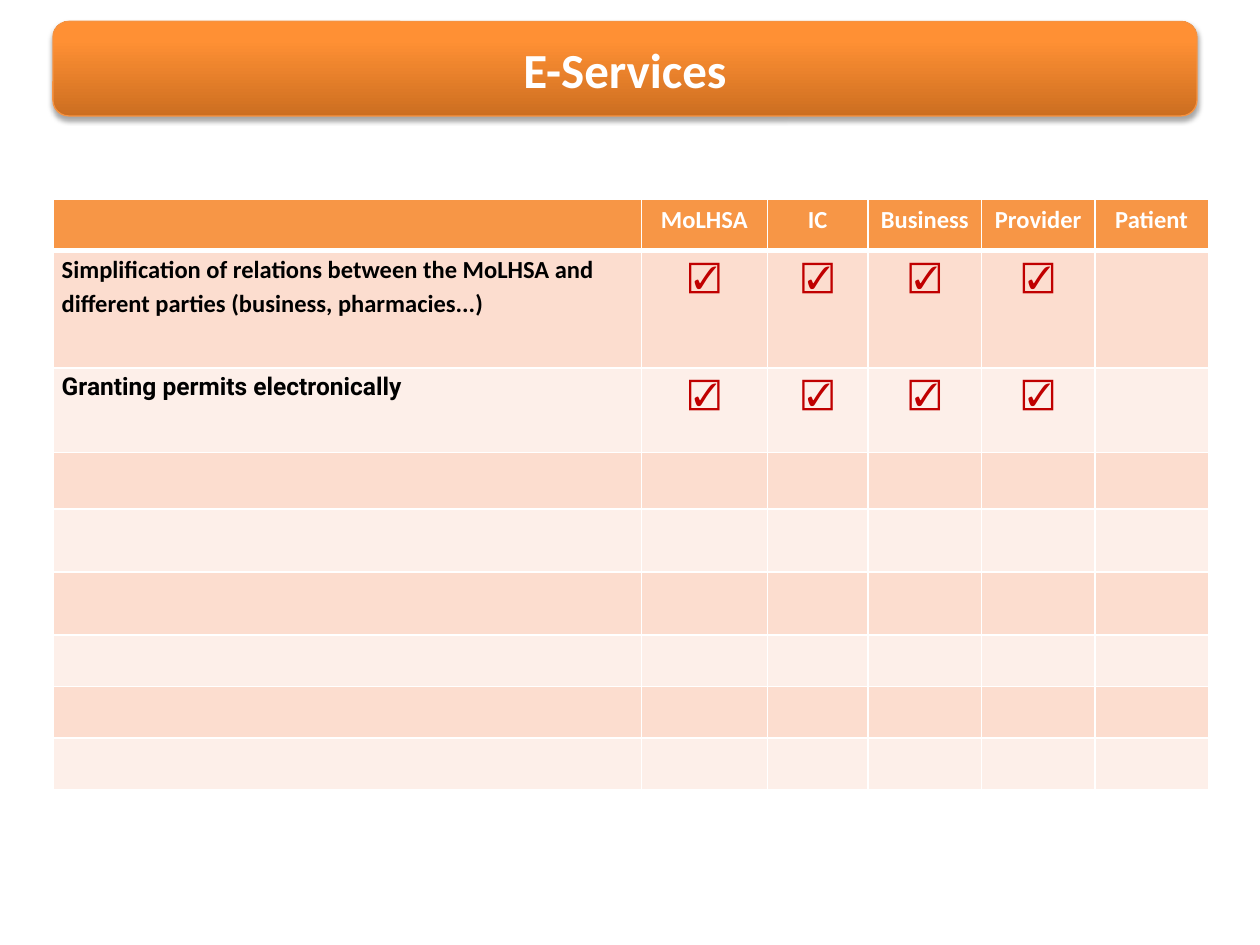
from dataclasses import dataclass

from lxml.etree import SubElement
from pptx import Presentation
from pptx.dml.color import RGBColor
from pptx.enum.shapes import MSO_SHAPE
from pptx.enum.text import MSO_ANCHOR, PP_ALIGN
from pptx.oxml import parse_xml
from pptx.oxml.ns import nsdecls, qn
from pptx.slide import Slide
from pptx.table import _Cell
from pptx.text.text import TextFrame
from pptx.util import Inches, Pt


@dataclass(frozen=True)
class Theme:
    """Colours, fonts and type sizes of the slide."""

    white: str = "FFFFFF"
    black: str = "000000"
    tick: str = "C00000"
    header: str = "F79646"
    bands: tuple[str, str] = ("FCDDCF", "FDEFE9")
    banner_line: str = "F69240"
    banner_stops: tuple[tuple[int, str], ...] = ((0, "CC6E20"), (80, "FF9034"), (100, "FF9136"))
    font: str = "Calibri"
    title_size: int = 28
    label_size: int = 14
    tick_size: int = 18


@dataclass(frozen=True)
class Service:
    """A service and the parties that it reaches."""

    name: str
    font: str
    parties: tuple[str, ...]


THEME = Theme()
PARTIES = ("MoLHSA", "IC", "Business", "Provider", "Patient")
SERVICES = (
    Service(
        "Simplification of relations between the MoLHSA and different parties (business, pharmacies...)",
        "Calibri",
        PARTIES[:4],
    ),
    Service("Granting permits electronically", "Roboto", PARTIES[:4]),
)
COLUMN_WIDTHS = (4.67, 1, 0.8, 0.9, 0.9, 0.9)
ROW_HEIGHTS = (0.41, 0.93, 0.67, 0.45, 0.5, 0.5, 0.41, 0.41, 0.41)
BANNER = tuple(Inches(length) for length in (0.42, 0.17, 9.08, 0.75))


def write(
    frame: TextFrame,
    text: str,
    *,
    size: int,
    color: str,
    font: str = THEME.font,
    bold: bool = True,
    align: PP_ALIGN = PP_ALIGN.CENTER,
    line_spacing: float | None = None,
    space_before: int | None = None,
) -> None:
    """Write one formatted paragraph into a text frame."""
    para = frame.paragraphs[0]
    para.alignment = align
    if line_spacing is not None:
        para.line_spacing = line_spacing
    if space_before is not None:
        para.space_before = Pt(space_before)
    span = para.add_run()
    span.text = text
    span.font.name = font
    span.font.size = Pt(size)
    span.font.bold = bold
    span.font.color.rgb = RGBColor.from_string(color)


def draw_banner(page: Slide) -> None:
    """Draw the rounded gradient banner with its soft shadow."""
    banner = page.shapes.add_shape(MSO_SHAPE.ROUNDED_RECTANGLE, *BANNER)
    banner.line.color.rgb = RGBColor.from_string(THEME.banner_line)
    banner.line.width = Pt(0.75)
    stops = "".join(
        f'<a:gs pos="{position * 1000}"><a:srgbClr val="{color}"/></a:gs>'
        for position, color in THEME.banner_stops
    )
    gradient = parse_xml(
        f'<a:gradFill {nsdecls("a")} rotWithShape="1"><a:gsLst>{stops}</a:gsLst>'
        '<a:lin ang="16200000" scaled="0"/></a:gradFill>'
    )
    shadow = parse_xml(
        f'<a:effectLst {nsdecls("a")}><a:outerShdw blurRad="{Pt(3.1)}" dist="{Pt(1.8)}" '
        f'dir="5400000" rotWithShape="0"><a:srgbClr val="{THEME.black}">'
        '<a:alpha val="35000"/></a:srgbClr></a:outerShdw></a:effectLst>'
    )
    properties = banner._element.spPr
    properties.find(qn("a:ln")).addprevious(gradient)
    properties.append(shadow)


def place_title(page: Slide, text: str) -> None:
    """Set the title over the banner."""
    title = page.shapes.title
    title.left, title.top, title.width, title.height = BANNER
    title.text_frame.vertical_anchor = MSO_ANCHOR.MIDDLE
    write(title.text_frame, text, size=THEME.title_size, color=THEME.white)


def style_cell(cell: _Cell, fill: str, top: float = 1, bottom: float = 1) -> None:
    """Give a cell its white borders and its fill."""
    properties = cell._tc.get_or_add_tcPr()
    for side, width in (("L", 1), ("R", 1), ("T", top), ("B", bottom)):
        border = SubElement(properties, qn(f"a:ln{side}"), w=str(Pt(width)))
        paint = SubElement(border, qn("a:solidFill"))
        SubElement(paint, qn("a:srgbClr"), val=THEME.white)
    cell.fill.solid()
    cell.fill.fore_color.rgb = RGBColor.from_string(fill)


def draw_table(page: Slide) -> None:
    """Draw the table of services by party."""
    table = page.shapes.add_table(
        len(ROW_HEIGHTS),
        len(COLUMN_WIDTHS),
        Inches(0.42),
        Inches(1.58),
        Inches(sum(COLUMN_WIDTHS)),
        Inches(sum(ROW_HEIGHTS)),
    ).table
    for column, width in zip(table.columns, COLUMN_WIDTHS):
        column.width = Inches(width)
    for index, (row, height) in enumerate(zip(table.rows, ROW_HEIGHTS)):
        row.height = Inches(height)
        for cell in row.cells:
            if index == 0:
                style_cell(cell, THEME.header, bottom=3)
            else:
                style_cell(cell, THEME.bands[(index - 1) % 2], top=3 if index == 1 else 1)

    for column, party in enumerate(PARTIES, start=1):
        write(table.cell(0, column).text_frame, party, size=THEME.label_size, color=THEME.white)
    for row, service in enumerate(SERVICES, start=1):
        label = table.cell(row, 0)
        label.margin_left = label.margin_right = Inches(0.07)
        label.margin_top = label.margin_bottom = 0
        write(
            label.text_frame,
            service.name,
            size=THEME.label_size,
            color=THEME.black,
            font=service.font,
            align=PP_ALIGN.LEFT,
            line_spacing=1.15,
            space_before=12,
        )
        for party in service.parties:
            frame = table.cell(row, PARTIES.index(party) + 1).text_frame
            write(frame, "☑", size=THEME.tick_size, color=THEME.tick, bold=False)


def main() -> None:
    """Build and save the deck."""
    deck = Presentation()
    deck.slide_width, deck.slide_height = Inches(10), Inches(7.5)
    page = deck.slides.add_slide(deck.slide_layouts[5])
    draw_table(page)
    draw_banner(page)
    title = page.shapes.title._element
    title.getparent().append(title)
    place_title(page, "E-Services")
    deck.save("out.pptx")


if __name__ == "__main__":
    main()
